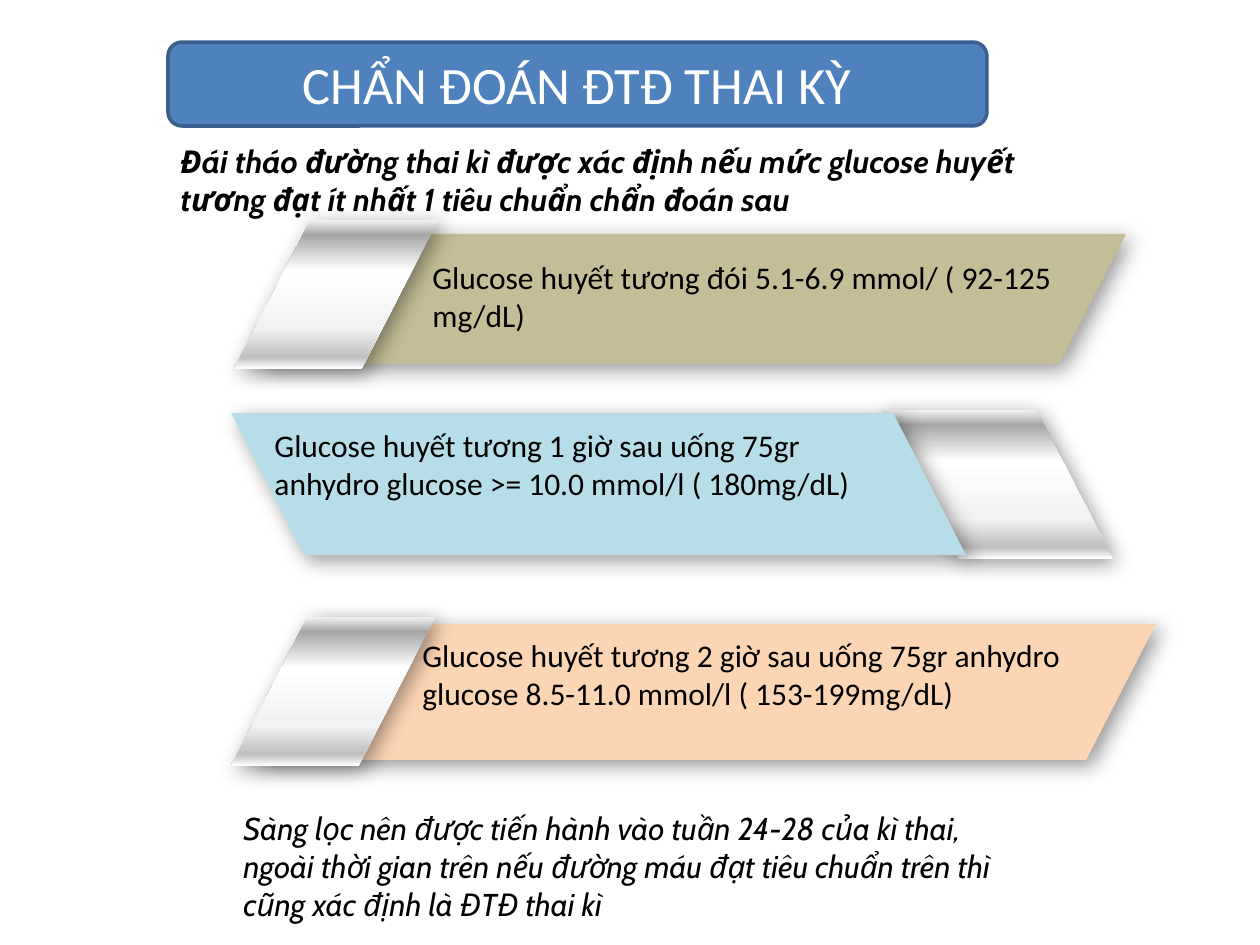
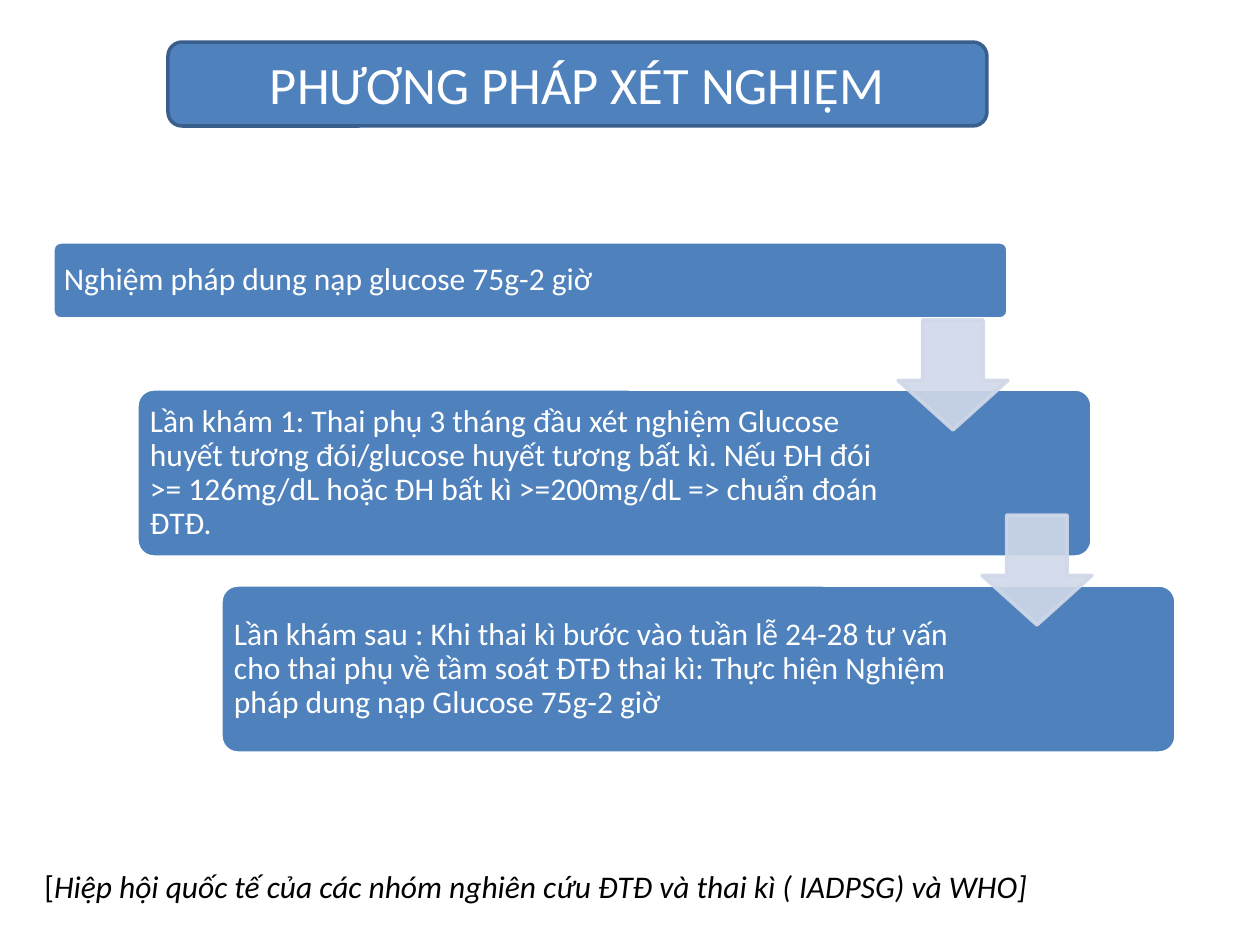
from dataclasses import dataclass

from lxml import etree
from pptx import Presentation
from pptx.dml.color import RGBColor
from pptx.enum.shapes import MSO_SHAPE
from pptx.enum.text import MSO_ANCHOR, MSO_AUTO_SIZE, PP_ALIGN
from pptx.oxml.ns import qn
from pptx.util import Emu, Pt

ROUND_RECT = MSO_SHAPE.ROUNDED_RECTANGLE
PARALLELOGRAM = MSO_SHAPE.PARALLELOGRAM
DOWN_ARROW = MSO_SHAPE.DOWN_ARROW
LEFT, CENTER = PP_ALIGN.LEFT, PP_ALIGN.CENTER
TOP, MIDDLE = MSO_ANCHOR.TOP, MSO_ANCHOR.MIDDLE
FIT_SHAPE = MSO_AUTO_SIZE.SHAPE_TO_FIT_TEXT
EMU_PER_PX = 914400 / 126


@dataclass(frozen=True)
class Theme:
    blue: str = "4F81BD"
    blue_edge: str = "3A5F8C"
    arrow: str = "D0D8E8"
    olive: str = "C4BD97"
    aqua: str = "B7DEE8"
    peach: str = "FCD5B5"
    white: str = "FFFFFF"
    black: str = "000000"
    metal: tuple = ((0, "F2F2F2"), (10, "A6A6A6"), (34, "FFFFFF"),
                    (73, "F2F2F2"), (92, "BFBFBF"), (100, "FFFFFF"))
    body_font: str = "Calibri"
    accent_font: str = "Cabin"
    title_size: int = 30
    body_size: int = 18
    edge: int = 2
    slant: float = 0.513


THEME = Theme()


def px(length):
    return Emu(round(length * EMU_PER_PX))


def add_color(parent, color, alpha=100):
    node = etree.SubElement(parent, qn("a:srgbClr"), val=color)
    if alpha < 100:
        etree.SubElement(node, qn("a:alpha"), val=str(alpha * 1000))


# Shared drawing helpers

def draw(slide, kind, box, fill=None, line=None, adjust=()):
    shape = slide.shapes.add_shape(kind, *map(px, box))
    shape.shadow.inherit = False
    for index, value in enumerate(adjust):
        shape.adjustments[index] = value
    if fill:
        shape.fill.solid()
        shape.fill.fore_color.rgb = RGBColor.from_string(fill)
    if line:
        shape.line.color.rgb = RGBColor.from_string(line)
        shape.line.width = Pt(THEME.edge)
    else:
        shape.line.fill.background()
    return shape


def write(shape, text, lead="", font=THEME.body_font, size=THEME.body_size,
          color=THEME.black, bold=False, italic=False, align=LEFT,
          anchor=TOP, spacing=None, inset=None, fit=False):
    """Fill a shape with one paragraph; lead is an upright opening."""
    frame = shape.text_frame
    frame.word_wrap = True
    frame.vertical_anchor = anchor
    if fit:
        frame.auto_size = FIT_SHAPE
    if inset is not None:
        frame.margin_left = frame.margin_right = px(inset)
        frame.margin_top = frame.margin_bottom = px(inset)
    paragraph = frame.paragraphs[0]
    paragraph.alignment = align
    if spacing:
        paragraph.line_spacing = spacing
    for piece, slanted in ((lead, False), (text, italic)):
        if piece:
            run = paragraph.add_run()
            run.text = piece
            run.font.name = font
            run.font.size = Pt(size)
            run.font.bold = bold
            run.font.italic = slanted
            run.font.color.rgb = RGBColor.from_string(color)


def add_text(slide, box, text, **style):
    write(slide.shapes.add_textbox(*map(px, box)), text, **style)


def add_title(slide, text):
    banner = draw(slide, ROUND_RECT, (168, 42, 819, 84), THEME.blue, THEME.blue_edge)
    write(banner, text, size=THEME.title_size, color=THEME.white,
          align=CENTER, anchor=MIDDLE)


# Slanted criteria bars

def add_slanted(slide, box, fill=None, mirrored=False):
    shape = draw(slide, PARALLELOGRAM, box, fill, adjust=(THEME.slant,))
    properties = shape._element.spPr
    if mirrored:
        properties.find(qn("a:xfrm")).set("flipH", "1")
    if not fill:
        shape.fill.gradient()
        shape.fill.gradient_angle = 270
        stops = properties.find(qn("a:gradFill")).find(qn("a:gsLst"))
        for stop in list(stops):
            stops.remove(stop)
        for position, color in THEME.metal:
            stop = etree.SubElement(stops, qn("a:gs"), pos=str(position * 1000))
            add_color(stop, color)
    shadow = etree.SubElement(
        properties.find(qn("a:effectLst")), qn("a:outerShdw"),
        blurRad=str(Pt(12)), dist=str(Pt(4)), dir=str(45 * 60000),
        algn="tl", rotWithShape="0")
    add_color(shadow, THEME.black, 40)


def add_criterion(slide, origin, bar, tab, label, color, text, mirrored=False):
    """Place a coloured bar, its metal tab and its label relative to origin."""
    def place(left, top, width, height):
        return origin[0] + left, origin[1] + top, width, height

    parts = [(bar, color), (tab, None)]
    for box, fill in reversed(parts) if mirrored else parts:
        add_slanted(slide, place(*box), fill, mirrored)
    return place(*label), text


def build_diagnosis(slide):
    criteria = [
        add_criterion(slide, (234, 220), (23, 14, 869, 130), (0, 0, 204, 149),
                      (186, 32, 693, 127), THEME.olive,
                      "Glucose huyết tương đói 5.1-6.9 mmol/ ( 92-125 mg/dL)"),
        add_criterion(slide, (231, 410), (0, 3, 735, 142), (651, 0, 231, 149),
                      (31, 10, 651, 127), THEME.aqua,
                      "Glucose huyết tương 1 giờ sau uống 75gr anhydro glucose "
                      ">= 10.0 mmol/l ( 180mg/dL)", mirrored=True),
        add_criterion(slide, (231, 617), (24, 7, 901, 136), (0, 0, 204, 149),
                      (179, 13, 735, 127), THEME.peach,
                      "Glucose huyết tương 2 giờ sau uống 75gr anhydro glucose "
                      "8.5-11.0 mmol/l ( 153-199mg/dL)"),
    ]
    for box, text in criteria:
        add_text(slide, box, text, fit=True)
    add_title(slide, "CHẨN ĐOÁN ĐTĐ THAI KỲ")
    add_text(slide, (168, 136, 861, 89),
             "Đái tháo đường thai kì được xác định nếu mức glucose huyết tương "
             "đạt ít nhất 1 tiêu chuẩn chẩn đoán sau",
             font=THEME.accent_font, bold=True, italic=True, fit=True)
    add_text(slide, (231, 803, 793, 165),
             "Sàng lọc nên được tiến hành vào tuần 24-28 của kì thai, ngoài thời "
             "gian trên nếu đường máu đạt tiêu chuẩn trên thì cũng xác định là "
             "ĐTĐ thai kì",
             font=THEME.accent_font, italic=True, fit=True)


# Staircase of test steps

def add_step(slide, box, text, inset, text_width):
    left, top, width, height = box
    draw(slide, ROUND_RECT, box, THEME.blue, THEME.white, adjust=(0.1,))
    add_text(slide, (left + inset, top + inset, text_width, height - 2 * inset),
             text, color=THEME.white, anchor=MIDDLE, spacing=0.9, inset=9)


def add_step_arrow(slide, right, top, side=110):
    arrow = draw(slide, DOWN_ARROW, (right - side, top, side, side),
                 THEME.arrow, THEME.arrow, adjust=(0.55, 0.45))
    for fill in arrow._element.spPr.iter(qn("a:solidFill")):
        fill.remove(fill[0])
        add_color(fill, THEME.arrow, 90)


def add_staircase(slide, left, top, steps, arrow_tops, width=955, shift=84):
    for index, (offset, height, inset, text_width, text) in enumerate(steps):
        box = (left + index * shift, top + offset, width, height)
        add_step(slide, box, text, inset, text_width)
    for index, offset in enumerate(arrow_tops):
        add_step_arrow(slide, left + index * shift + width, top + offset)


def build_method(slide):
    add_title(slide, "PHƯƠNG PHÁP XÉT NGHIỆM")
    steps = [
        (0, 77, 2, 779, "Nghiệm pháp dung nạp glucose 75g-2 giờ"),
        (147, 168, 4, 752,
         "Lần khám 1: Thai phụ 3 tháng đầu xét nghiệm Glucose huyết tương "
         "đói/glucose huyết tương bất kì. Nếu ĐH đói >= 126mg/dL hoặc ĐH bất kì "
         ">=200mg/dL => chuẩn đoán ĐTĐ."),
        (343, 168, 4, 752,
         "Lần khám sau : Khi thai kì bước vào tuần lễ 24-28 tư vấn cho thai phụ "
         "về tầm soát ĐTĐ thai kì: Thực hiện Nghiệm pháp dung nạp Glucose "
         "75g-2 giờ"),
    ]
    add_staircase(slide, 53, 242, steps, arrow_tops=(78, 273))
    add_text(slide, (32, 861, 1071, 50),
             "Hiệp hội quốc tế của các nhóm nghiên cứu ĐTĐ và thai kì "
             "( IADPSG) và WHO]", lead="[", italic=True, fit=True)


def main():
    deck = Presentation()
    deck.slide_width, deck.slide_height = px(1260), px(945)
    blank = deck.slide_layouts[6]
    for build in (build_diagnosis, build_method):
        build(deck.slides.add_slide(blank))
    deck.save("out.pptx")


if __name__ == "__main__":
    main()
